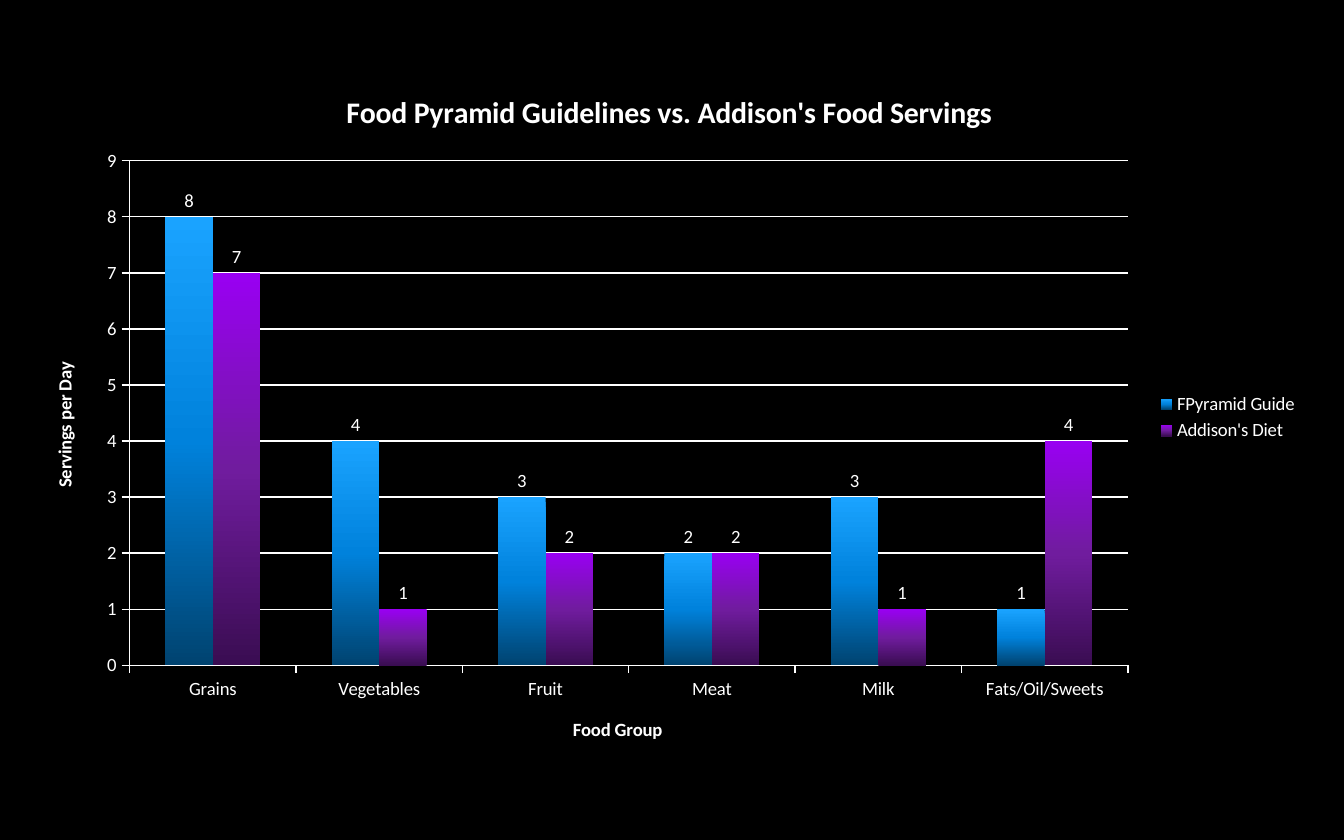
from copy import deepcopy
from pptx import Presentation
from pptx.chart.data import CategoryChartData
from pptx.dml.color import RGBColor
from pptx.enum.chart import (XL_CHART_TYPE, XL_LABEL_POSITION,
                             XL_LEGEND_POSITION, XL_TICK_MARK)
from pptx.oxml import parse_xml
from pptx.oxml.ns import nsdecls, qn
from pptx.util import Inches, Pt

TITLE = "Food Pyramid Guidelines vs. Addison's Food Servings"
GROUPS = ["Grains", "Vegetables", "Fruit", "Meat", "Milk", "Fats/Oil/Sweets"]
# name, servings, gradient from top to bottom
SERIES = [
    ("FPyramid Guide", [8, 4, 3, 2, 3, 1], ["1AA3FF", "0082DC", "004370"]),
    ("Addison's Diet", [7, 1, 2, 2, 1, 4], ["9900F2", "701C9E", "3A0D52"]),
]
PLOT = {"x": 0.08, "y": 0.135, "w": 0.777, "h": 0.718}  # share of the chart
WHITE = "FFFFFF"


def rgb(text):
    return RGBColor.from_string(text)


def style(font, size, bold=False):
    font.name = "Calibri"
    font.size = Pt(size)
    font.bold = bold
    font.color.rgb = rgb(WHITE)


def rule(line):
    line.color.rgb = rgb(WHITE)
    line.width = Pt(0.75)


def label(owner, text, size):
    """Give a chart or an axis a bold title."""
    frame = owner.text_frame
    frame.text = text
    style(frame.paragraphs[0].font, size, True)


def shade(form, tones):
    """Fill from top to bottom through three evenly spaced tones."""
    fill = form.fill
    fill.gradient()
    fill.gradient_angle = 270
    first = next(form._element.iter(qn("a:gs")))
    mid = deepcopy(first)
    mid.set("pos", "50000")
    first.addnext(mid)
    for stop, tone in zip(fill.gradient_stops, tones):
        stop.color.rgb = rgb(tone)


def place(chart):
    """Fix the inner plot area within the chart."""
    area = chart._chartSpace.chart.plotArea
    for old in area.findall(qn("c:layout")):
        area.remove(old)
    modes = "".join(f'<c:{k}Mode val="edge"/>' for k in "xy")
    sizes = "".join(f'<c:{k} val="{v}"/>' for k, v in PLOT.items())
    area.insert(0, parse_xml(
        f'<c:layout {nsdecls("c")}><c:manualLayout>'
        f'<c:layoutTarget val="inner"/>{modes}{sizes}'
        '</c:manualLayout></c:layout>'))


deck = Presentation()
deck.slide_width, deck.slide_height = Inches(10), Inches(6.25)
slide = deck.slides.add_slide(deck.slide_layouts[6])
back = slide.background.fill
back.solid()
back.fore_color.rgb = rgb("000000")

data = CategoryChartData()
data.categories = GROUPS
for name, values, tones in SERIES:
    data.add_series(name, values)
chart = slide.shapes.add_chart(
    XL_CHART_TYPE.COLUMN_CLUSTERED, Inches(0.2), Inches(0.49),
    Inches(9.56), Inches(5.23), data).chart
style(chart.font, 10)
label(chart.chart_title, TITLE, 16)
chart.chart_title.include_in_layout = False
place(chart)

chart.has_legend = True
chart.legend.position = XL_LEGEND_POSITION.RIGHT
chart.legend.include_in_layout = False
style(chart.legend.font, 10)

for axis, text in ((chart.category_axis, "Food Group"),
                   (chart.value_axis, "Servings per Day")):
    label(axis.axis_title, text, 10)
    style(axis.tick_labels.font, 10)
    axis.major_tick_mark = XL_TICK_MARK.OUTSIDE
    axis.minor_tick_mark = XL_TICK_MARK.NONE
    rule(axis.format.line)
scale = chart.value_axis
scale.minimum_scale, scale.maximum_scale, scale.major_unit = 0, 9, 1
scale.has_major_gridlines = True
rule(scale.major_gridlines.format.line)

plot = chart.plots[0]
plot.vary_by_categories = False
plot.gap_width, plot.overlap = 150, 0
for bars, (name, values, tones) in zip(plot.series, SERIES):
    shade(bars.format, tones)
    bars.invert_if_negative = False
    marks = bars.data_labels
    marks.show_value = True
    marks.position = XL_LABEL_POSITION.OUTSIDE_END
    style(marks.font, 10)

deck.save("out.pptx")
